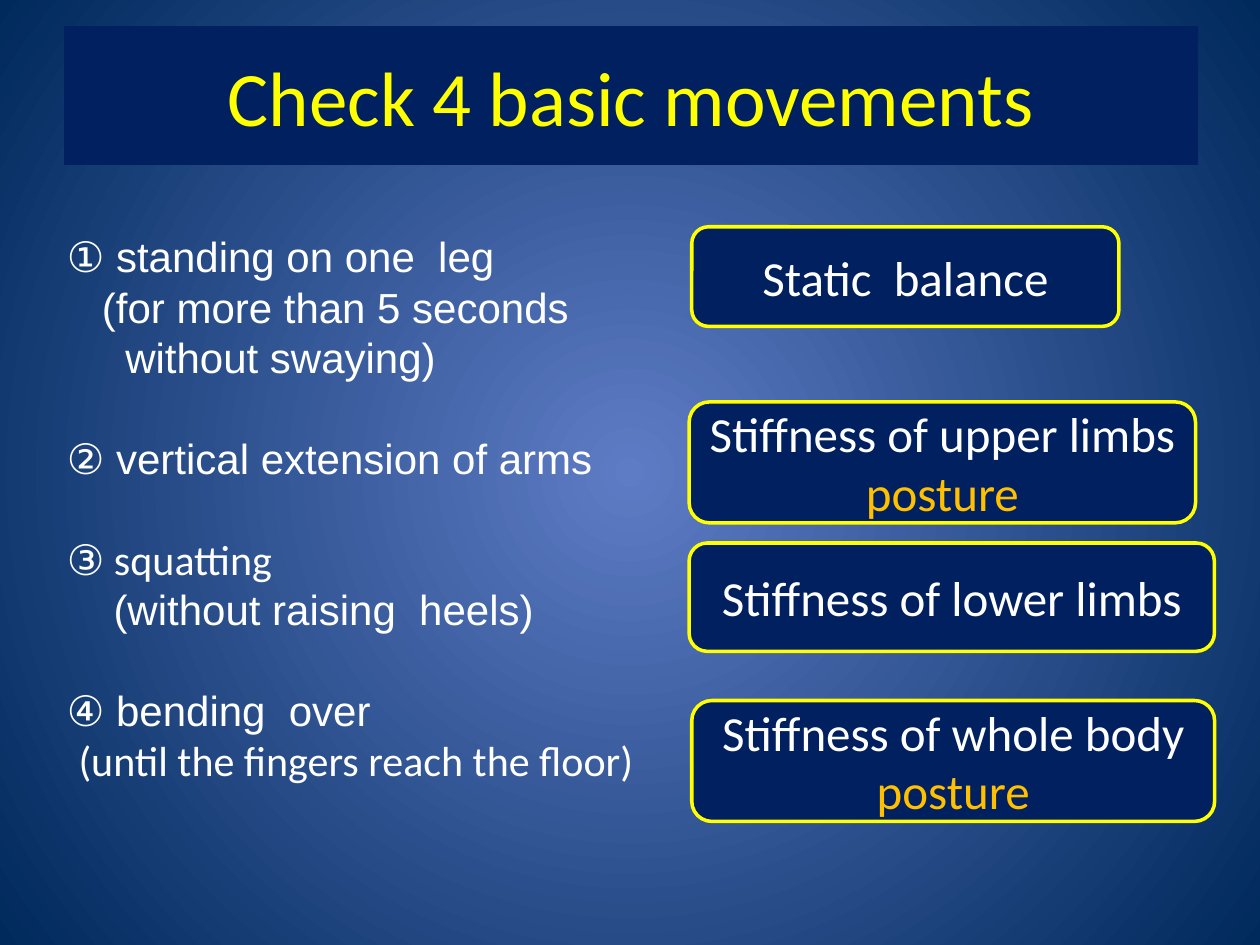
from lxml.etree import SubElement
from pptx import Presentation
from pptx.dml.color import RGBColor
from pptx.enum.shapes import MSO_SHAPE as Shape
from pptx.enum.text import MSO_ANCHOR as Anchor, MSO_AUTO_SIZE as AutoSize, PP_ALIGN as Align
from pptx.oxml.ns import qn
from pptx.util import Pt

NAVY, YELLOW, WHITE, AMBER = "002060", "FFFF00", "FFFFFF", "FFC000"
GLOW, EDGE = "5E7CC5", "00295C"
SPACE, LINE = 6.67, 28.8

TITLE = "Check 4 basic movements"
# Each line: indent in spaces, then (text, font) spans
MOVEMENTS = [
    [(0, [("① standing on one  leg", "Arial")]),
     (3, [("(for more than 5 seconds", "Arial")]),
     (5, [("without swaying)", "Arial")])],
    [(0, [("② vertical extension of arms", "Arial")])],
    [(0, [("③", "Arial"), (" squatting", "Calibri")]),
     (4, [("(without raising  heels)", "Arial")])],
    [(0, [("④ bending  over", "Arial")]),
     (1, [("(until the fingers reach the floor)", "Calibri")])],
]
FINDINGS = [
    ((395.3, 129.6, 244.1, 56.9), [("Static  balance", WHITE)]),
    ((393.8, 229.7, 289.4, 69.1), [("Stiffness of upper limbs", WHITE), ("posture", AMBER)]),
    ((393.8, 310.3, 300.2, 61.9), [("Stiffness of lower limbs", WHITE)]),
    ((395.3, 400.3, 298.8, 69.1), [("Stiffness of whole body", WHITE), ("posture", AMBER)]),
]


def color(value):
    return RGBColor.from_string(value)


def fill(shape, value):
    shape.fill.solid()
    shape.fill.fore_color.rgb = color(value)


def place(shape, left, top, width, height):
    shape.left, shape.top, shape.width, shape.height = map(Pt, (left, top, width, height))


def add_span(para, text, size=24, font="Calibri", ink=WHITE):
    span = para.add_run()
    span.text = text
    span.font.size = Pt(size)
    span.font.name = font
    span.font.color.rgb = color(ink)


def next_para(frame, index):
    return frame.add_paragraph() if index else frame.paragraphs[0]


def paint_background(page):
    backdrop = page.background.fill
    backdrop.gradient()
    for stop, value in zip(backdrop.gradient_stops, (GLOW, EDGE)):
        stop.color.rgb = color(value)
    gradient = next(page.element.iter(qn("a:gradFill")))
    gradient.remove(gradient.find(qn("a:lin")))
    circle = SubElement(gradient, qn("a:path"), path="circle")
    SubElement(circle, qn("a:fillToRect"), l="50000", t="50000", r="50000", b="50000")


def add_title(page):
    title = page.shapes.title
    place(title, 36.7, 15, 648, 79.2)
    fill(title, NAVY)
    title.text_frame.vertical_anchor = Anchor.MIDDLE
    para = title.text_frame.paragraphs[0]
    para.alignment = Align.CENTER
    add_span(para, TITLE, size=44, ink=YELLOW)


def add_movements(page):
    body = page.placeholders[1]
    place(body, 31, 128.2, 357.1, 356.4)
    frame = body.text_frame
    frame.auto_size = AutoSize.NONE
    frame.word_wrap = True
    lines = [(group > 0 and row == 0, *line)
             for group, rows in enumerate(MOVEMENTS) for row, line in enumerate(rows)]
    for index, (gap, indent, spans) in enumerate(lines):
        para = next_para(frame, index)
        properties = para._p.get_or_add_pPr()
        properties.set("marL", str(Pt(indent * SPACE)))
        properties.set("indent", "0")
        SubElement(properties, qn("a:buNone"))
        para.line_spacing = Pt(LINE)
        para.space_before = Pt(LINE if gap else 0)
        for text, font in spans:
            add_span(para, text, font=font)


def add_finding(page, spot, lines):
    box = page.shapes.add_shape(Shape.ROUNDED_RECTANGLE, *map(Pt, spot))
    box.shadow.inherit = False
    fill(box, NAVY)
    box.line.color.rgb = color(YELLOW)
    box.line.width = Pt(2)
    frame = box.text_frame
    frame.word_wrap = True
    frame.vertical_anchor = Anchor.MIDDLE
    frame.margin_left = frame.margin_right = 0
    for index, (text, ink) in enumerate(lines):
        para = next_para(frame, index)
        para.alignment = Align.CENTER
        add_span(para, text, size=28, ink=ink)


def main():
    deck = Presentation()
    deck.slide_width, deck.slide_height = Pt(720), Pt(540)
    page = deck.slides.add_slide(deck.slide_layouts[1])
    paint_background(page)
    add_title(page)
    add_movements(page)
    for spot, lines in FINDINGS:
        add_finding(page, spot, lines)
    deck.save("out.pptx")


if __name__ == "__main__":
    main()
